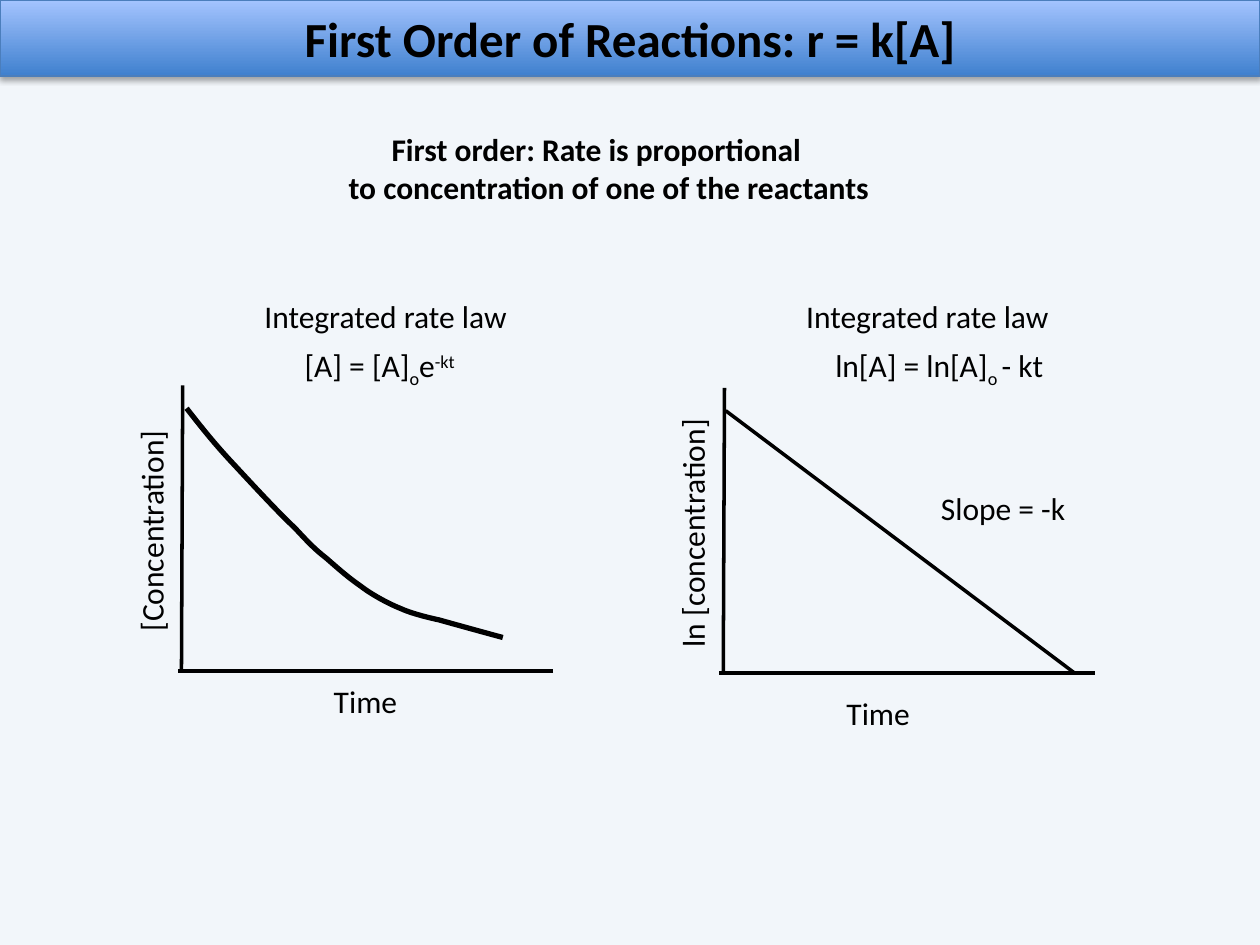
"""Build the slide on first order reactions with its two rate law plots."""
from dataclasses import dataclass

from lxml.etree import SubElement
from pptx import Presentation
from pptx.dml.color import RGBColor
from pptx.enum.shapes import MSO_CONNECTOR, MSO_SHAPE
from pptx.enum.text import MSO_ANCHOR, MSO_AUTO_SIZE, PP_ALIGN
from pptx.oxml.ns import qn
from pptx.shapes.autoshape import Shape
from pptx.shapes.shapetree import _BaseGroupShapes
from pptx.util import Pt

BLACK = RGBColor(0x00, 0x00, 0x00)
BACKGROUND = RGBColor(0xF2, 0xF6, 0xFA)
BANNER_BOTTOM = RGBColor(0x3F, 0x80, 0xCE)
BANNER_TOP = RGBColor(0xA4, 0xC4, 0xFF)
BANNER_EDGE = RGBColor(0x4B, 0x7E, 0xBC)

FONT = "Calibri"
SUBSCRIPT, SUPERSCRIPT = -25, 30
LABEL_HEIGHT = 29
AXIS_HEIGHT = 163.1
PLOT_PITCH = 309.6
LAW_TOP, EQUATION_TOP = 166.3, 194.4

Point = tuple[float, float]
Script = tuple[str, int]

DECAY_POINTS: list[Point] = [
    (106.6, 233.3),
    (114.5, 243.4), (122.4, 253.4), (132.5, 264.2),
    (143.3, 275.8), (159.1, 293), (168.5, 301.7),
    (177.1, 311), (180, 313.9), (186.5, 319),
    (193, 324.7), (198.7, 329.8), (205.9, 334.8),
    (212.4, 339.8), (221.8, 344.9), (229, 347.8),
    (236.9, 351.4), (250.6, 354.2), (250.6, 354.2),
    (262.8, 357.6), (275.1, 361), (287.3, 364.3),
]


@dataclass(frozen=True)
class Label:
    left: float
    top: float
    width: float
    lines: tuple[tuple[Script, ...], ...]
    rotation: float = 0
    bold: bool = False
    height: float = LABEL_HEIGHT
    first_indent: float = 0


@dataclass(frozen=True)
class Plot:
    left: float
    top: float
    quantity: Label


def plain(text: str) -> tuple[tuple[Script, ...], ...]:
    """Return a single line of ordinary text."""
    return (((text, 0),),)


def draw_label(shapes: _BaseGroupShapes, label: Label) -> None:
    """Add an unwrapped text label."""
    box = shapes.add_textbox(Pt(label.left), Pt(label.top), Pt(label.width), Pt(label.height))
    box.rotation = label.rotation
    frame = box.text_frame
    frame.word_wrap = False
    frame.auto_size = MSO_AUTO_SIZE.SHAPE_TO_FIT_TEXT
    for index, line in enumerate(label.lines):
        paragraph = frame.add_paragraph() if index else frame.paragraphs[0]
        if label.first_indent and index == 0:
            paragraph._p.get_or_add_pPr().set("marL", str(Pt(label.first_indent)))
        paragraph.font.name = FONT
        paragraph.font.size = Pt(18)
        paragraph.font.bold = label.bold
        paragraph.font.color.rgb = BLACK
        for text, baseline in line:
            run = paragraph.add_run()
            run.text = text
            if baseline:
                run.font._element.set("baseline", str(baseline * 1000))


def draw_line(shapes: _BaseGroupShapes, start: Point, end: Point) -> None:
    """Add a straight black line without a shadow."""
    line = shapes.add_connector(MSO_CONNECTOR.STRAIGHT, *(Pt(value) for value in start + end))
    line.line.color.rgb = BLACK
    line.line.width = Pt(2)
    SubElement(line._element.spPr, qn("a:effectLst"))


def draw_plot(shapes: _BaseGroupShapes, plot: Plot) -> None:
    """Add both axes and the label of the vertical one."""
    base = plot.top + AXIS_HEIGHT
    draw_line(shapes, (plot.left, plot.top), (plot.left - 0.7, base))
    draw_line(shapes, (plot.left + 211.7, base), (plot.left - 2.9, base))
    draw_label(shapes, plot.quantity)


def draw_curve(shapes: _BaseGroupShapes, points: list[Point]) -> None:
    """Add an open Bezier curve through every third point."""
    start, *controls = points
    builder = shapes.build_freeform(Pt(start[0]), Pt(start[1]))
    builder.add_line_segments([(Pt(x), Pt(y)) for x, y in controls], close=False)
    curve = builder.convert_to_shape()
    curve.shadow.inherit = False
    curve.fill.background()
    curve.line.color.rgb = BLACK
    curve.line.width = Pt(3)
    outline = next(curve._element.iter(qn("a:path")))
    segments = outline.findall(qn("a:lnTo"))
    for first in range(0, len(segments), 3):
        bezier = SubElement(outline, qn("a:cubicBezTo"))
        for segment in segments[first:first + 3]:
            bezier.append(segment[0])
            outline.remove(segment)


def add_shadow(shape: Shape) -> None:
    """Give a shape a soft shadow straight below it."""
    shape.shadow.inherit = False
    effects = shape._element.spPr.find(qn("a:effectLst"))
    shadow = SubElement(effects, qn("a:outerShdw"), blurRad=str(Pt(3.1)),
                        dist=str(Pt(1.8)), dir="5400000", rotWithShape="0")
    color = SubElement(shadow, qn("a:srgbClr"), val=str(BLACK))
    SubElement(color, qn("a:alpha"), val="35000")


def draw_banner(shapes: _BaseGroupShapes, title: str) -> None:
    """Add the gradient title band."""
    banner = shapes.add_shape(MSO_SHAPE.RECTANGLE, Pt(0), Pt(0), Pt(720), Pt(43.5))
    banner.fill.gradient()
    banner.fill.gradient_angle = 90
    for stop, color in zip(banner.fill.gradient_stops, (BANNER_BOTTOM, BANNER_TOP)):
        stop.color.rgb = color
    banner.line.color.rgb = BANNER_EDGE
    banner.line.width = Pt(0.75)
    add_shadow(banner)
    banner.text_frame.vertical_anchor = MSO_ANCHOR.MIDDLE
    paragraph = banner.text_frame.paragraphs[0]
    paragraph.text = title
    paragraph.alignment = PP_ALIGN.CENTER
    paragraph.font.name = FONT
    paragraph.font.size = Pt(28)
    paragraph.font.bold = True
    paragraph.font.color.rgb = BLACK


def main() -> None:
    """Assemble and save the slide."""
    presentation = Presentation()
    presentation.slide_width, presentation.slide_height = Pt(720), Pt(540)
    slide = presentation.slides.add_slide(presentation.slide_layouts[6])
    slide.background.fill.solid()
    slide.background.fill.fore_color.rgb = BACKGROUND
    shapes = slide.shapes

    decay = Plot(104.4, 220.3, Label(20.9, 288, 131, plain("[Concentration]"), rotation=270))
    logarithm = Plot(decay.left + PLOT_PITCH, 221.6,
                     Label(322.6, 289.4, 146.2, plain("ln [concentration]"), rotation=270))
    draw_plot(shapes.add_group_shape().shapes, decay)
    draw_banner(shapes, "First Order of Reactions: r = k[A]")
    draw_plot(shapes, logarithm)
    draw_line(shapes, (614.2, logarithm.top + AXIS_HEIGHT), (414.7, 234.7))

    law = plain("Integrated rate law")
    exponential = ((("[A] = [A]", 0), ("o", SUBSCRIPT), ("e", 0), ("-kt", SUPERSCRIPT)),)
    linear = ((("ln[A] = ln[A]", 0), ("o ", SUBSCRIPT), ("- kt", 0)),)
    definition = (plain("First order: Rate is proportional")
                  + plain("to concentration of one of the reactants"))
    for label in (
        Label(476.6, 393.1, 51.1, plain("Time")),
        Label(530.6, 275.8, 86.4, plain("Slope = -k")),
        Label(183.6, 385.9, 51.1, plain("Time")),
        Label(167, EQUATION_TOP, 103.7, exponential),
        Label(470.2, EQUATION_TOP, 136.1, linear),
        Label(144, LAW_TOP, 154.8, law),
        Label(144 + PLOT_PITCH, LAW_TOP, 154.8, law),
        Label(192.2, 70.6, 314.6, definition, bold=True, height=51, first_indent=24.5),
    ):
        draw_label(shapes, label)
    draw_curve(shapes, DECAY_POINTS)
    presentation.save("out.pptx")


if __name__ == "__main__":
    main()
